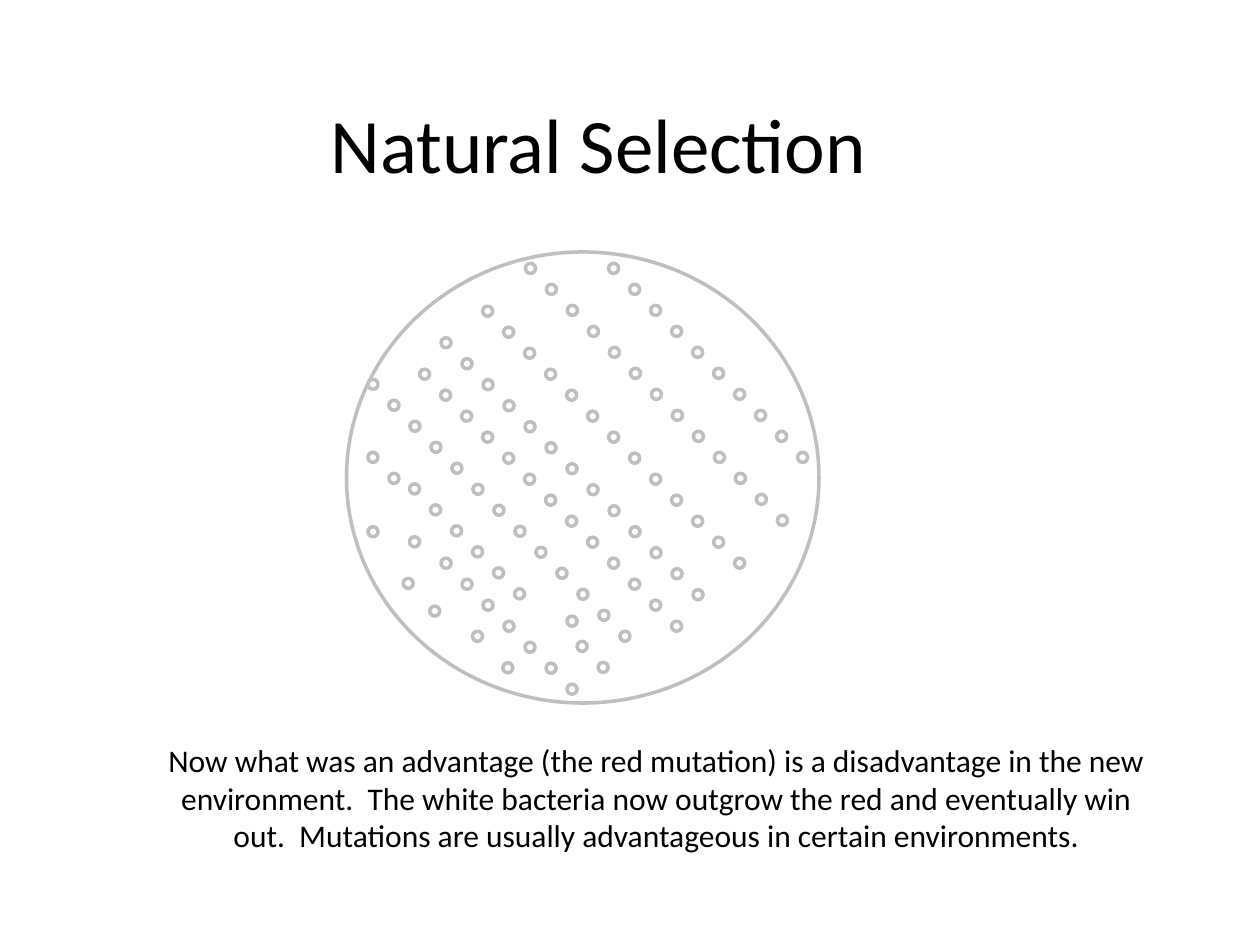
from pptx import Presentation
from pptx.dml.color import RGBColor
from pptx.enum.shapes import MSO_SHAPE
from pptx.enum.text import MSO_ANCHOR, PP_ALIGN
from pptx.util import Inches, Pt

COLORS = {"text": "000000", "fill": "FFFFFF", "outline": "BFBFBF"}
FONT = "Calibri"
BACTERIUM_SIZE = 0.08
COLONY_STEP = 1 / 6

# Each colony runs down to the right: left and top within the dish, count
COLONIES = [
    (0.58, 0.93, 13), (0.75, 0.68, 13), (1.08, 0.43, 13), (1.42, 0.09, 13),
    (0.45, 2.59, 1), (2.08, 0.09, 10), (1.00, 3.01, 1), (0.75, 2.43, 7),
    (1.00, 2.34, 3), (0.17, 1.01, 13), (0.17, 2.18, 1), (0.50, 1.84, 3),
    (1.24, 3.26, 1), (1.83, 3.09, 2), (0.17, 1.59, 2), (0.50, 2.26, 1),
    (0.66, 2.81, 1), (1.75, 2.89, 1),
]
CAPTION = (
    "Now what was an advantage (the red mutation) is a disadvantage in the new "
    "environment.  The white bacteria now outgrow the red and eventually win "
    "out.  Mutations are usually advantageous in certain environments."
)


def write_text(shape, text, size, anchor):
    text_frame = shape.text_frame
    text_frame.word_wrap = True
    text_frame.vertical_anchor = anchor
    text_frame.text = text
    paragraph = text_frame.paragraphs[0]
    paragraph.alignment = PP_ALIGN.CENTER
    font = paragraph.runs[0].font
    font.name = FONT
    font.size = Pt(size)
    font.color.rgb = RGBColor.from_string(COLORS["text"])


def add_title(slide, left, top, width, height):
    title = slide.shapes.title
    title.left, title.top = Inches(left), Inches(top)
    title.width, title.height = Inches(width), Inches(height)
    write_text(title, "Natural Selection", 44, MSO_ANCHOR.MIDDLE)


def add_ellipse(slide, left, top, width, height):
    ellipse = slide.shapes.add_shape(
        MSO_SHAPE.OVAL, Inches(left), Inches(top), Inches(width), Inches(height)
    )
    ellipse.shadow.inherit = False
    ellipse.fill.solid()
    ellipse.fill.fore_color.rgb = RGBColor.from_string(COLORS["fill"])
    ellipse.line.color.rgb = RGBColor.from_string(COLORS["outline"])
    ellipse.line.width = Pt(2)


def add_petri_dish(slide, left, top, width, height):
    """Draw the dish and the diagonal colonies of bacteria inside it."""
    add_ellipse(slide, left, top, width, height)
    for colony_left, colony_top, count in COLONIES:
        for index in range(count):
            offset = index * COLONY_STEP
            add_ellipse(
                slide,
                left + colony_left + offset,
                top + colony_top + offset,
                BACTERIUM_SIZE,
                BACTERIUM_SIZE,
            )


def add_caption(slide, left, top, width, height):
    caption = slide.shapes.add_textbox(
        Inches(left), Inches(top), Inches(width), Inches(height)
    )
    write_text(caption, CAPTION, 18, MSO_ANCHOR.TOP)


def main():
    presentation = Presentation()
    presentation.slide_width = Inches(10)
    presentation.slide_height = Inches(7.5)
    slide = presentation.slides.add_slide(presentation.slide_layouts[0])
    subtitle = slide.placeholders[1].element
    subtitle.getparent().remove(subtitle)

    add_title(slide, 0.5, 0.33, 8.5, 1.61)
    add_petri_dish(slide, 2.75, 2, 3.75, 3.58)
    add_caption(slide, 1.21, 5.83, 8, 1.31)
    presentation.save("out.pptx")


if __name__ == "__main__":
    main()
